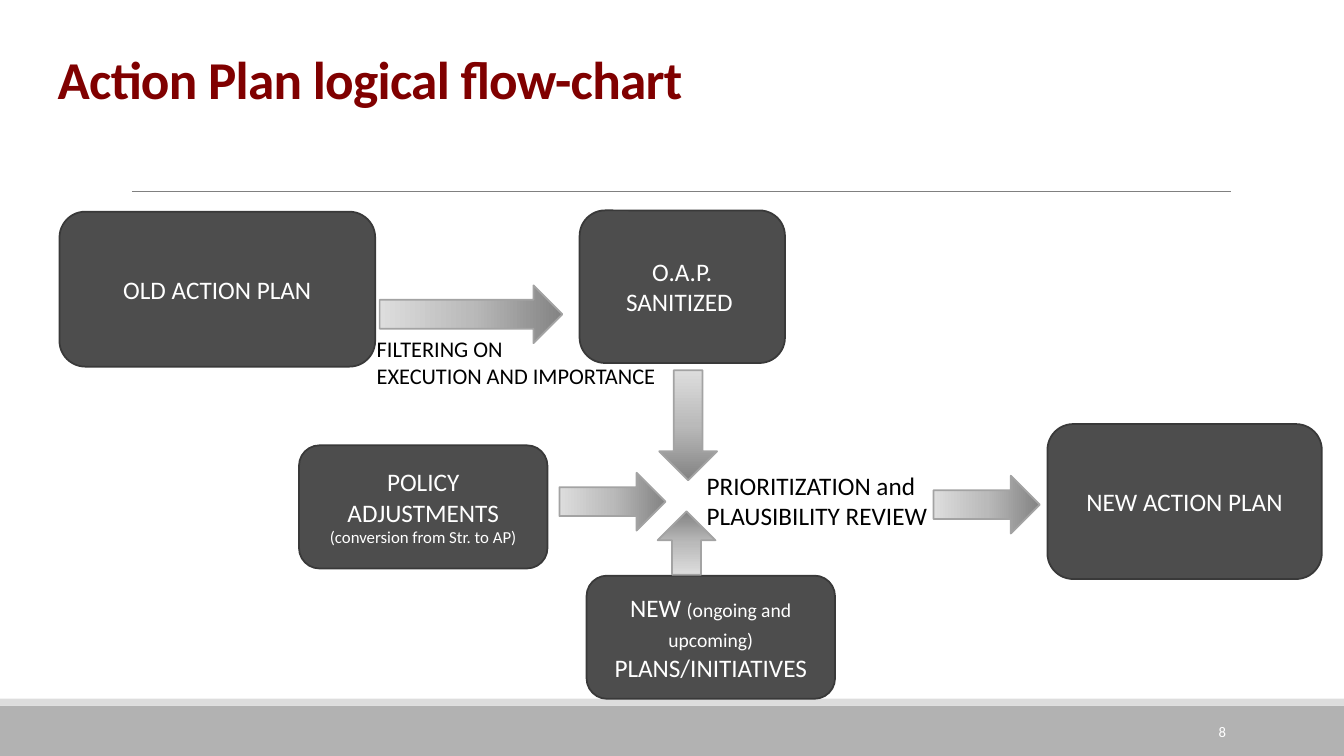
from copy import deepcopy
from dataclasses import dataclass

from lxml.etree import SubElement
from pptx import Presentation
from pptx.dml.color import RGBColor
from pptx.enum.shapes import MSO_CONNECTOR, MSO_SHAPE
from pptx.enum.text import MSO_ANCHOR, MSO_AUTO_SIZE, PP_ALIGN
from pptx.oxml.ns import qn
from pptx.util import Pt

FONT = "Calibri"
HEX = {
    "title": "800000", "rule": "808080", "band": "B2B2B2", "strip": "DDDDDD",
    "box": "4D4D4D", "edge": "393939", "rim": "A3A3A3",
    "white": "FFFFFF", "black": "000000",
}
FADE = [(0, "838383"), (0.5, "BABABA"), (1, "DDDDDD")]


@dataclass
class Box:
    left: float
    top: float
    width: float
    height: float
    runs: list[tuple[str, float]]


@dataclass
class Arrow:
    left: float
    top: float
    width: float
    turn: int = 0


@dataclass
class Label:
    left: float
    top: float
    width: float
    height: float
    text: str
    size: float


BOXES = [
    Box(42.5, 151.2, 225.5, 110.7, [("OLD ACTION PLAN", 18)]),
    Box(414, 150.3, 146.7, 109, [("O.A.P. SANITIZED ", 18)]),
    Box(748.2, 302.9, 196, 110.7, [("NEW ACTION PLAN", 18)]),
    Box(419, 411.2, 177.5, 88,
        [("NEW ", 18), ("(ongoing and upcoming)", 14), (" PLANS/INITIATIVES", 18)]),
    Box(213.6, 318.1, 177.5, 88,
        [("POLICY ADJUSTMENTS ", 18), ("(conversion from Str. to AP)", 12)]),
]
ARROWS = [
    Arrow(271.2, 203.8, 130.5),
    Arrow(452.3, 283.1, 78.5, 90),
    Arrow(399.6, 337.7, 75.8),
    Arrow(467.8, 367.2, 45.2, 270),
    Arrow(666.9, 339.8, 75.8),
]
LABELS = [
    Label(262, 235.6, 216, 46, "FILTERING ON\nEXECUTION AND IMPORTANCE", 16),
    Label(497.7, 332.1, 173.5, 51, "PRIORITIZATION and\vPLAUSIBILITY REVIEW", 18),
]


def tint(name: str) -> RGBColor:
    return RGBColor.from_string(HEX[name])


def style(font, size: float, name: str) -> None:
    font.name, font.size = FONT, Pt(size)
    font.color.rgb = tint(name)


def shape(kind, left: float, top: float, width: float, height: float):
    item = slide.shapes.add_shape(kind, Pt(left), Pt(top), Pt(width), Pt(height))
    item.shadow.inherit = False
    return item


def band(top: float, height: float, name: str) -> None:
    bar = shape(MSO_SHAPE.RECTANGLE, 0, top, 960, height)
    bar.fill.solid()
    bar.fill.fore_color.rgb = tint(name)
    bar.line.fill.background()


def edge(item, name: str) -> None:
    item.line.color.rgb = tint(name)
    item.line.width = Pt(1.25)


def draw_box(box: Box) -> None:
    item = shape(MSO_SHAPE.ROUNDED_RECTANGLE, box.left, box.top, box.width, box.height)
    item.fill.solid()
    item.fill.fore_color.rgb = tint("box")
    edge(item, "edge")
    item.text_frame.vertical_anchor = MSO_ANCHOR.MIDDLE
    para = item.text_frame.paragraphs[0]
    para.alignment = PP_ALIGN.CENTER
    style(para.font, box.runs[0][1], "white")
    for text, size in box.runs:
        run = para.add_run()
        run.text = text
        style(run.font, size, "white")


def draw_arrow(arrow: Arrow) -> None:
    item = shape(MSO_SHAPE.RIGHT_ARROW, arrow.left, arrow.top, arrow.width, 41.3)
    item.rotation = arrow.turn
    item.fill.gradient()
    item.fill.gradient_angle = 180
    # Add the middle stop of the fade
    first = next(item._element.spPr.iter(qn("a:gs")))
    first.addnext(deepcopy(first))
    for stop, (spot, code) in zip(item.fill.gradient_stops, FADE):
        stop.position = spot
        stop.color.rgb = RGBColor.from_string(code)
    edge(item, "rim")


def draw_label(label: Label, name: str = "black", align=PP_ALIGN.LEFT,
               anchor=MSO_ANCHOR.TOP, wrap: bool = False) -> None:
    item = slide.shapes.add_textbox(
        Pt(label.left), Pt(label.top), Pt(label.width), Pt(label.height))
    frame = item.text_frame
    frame.text = label.text
    frame.word_wrap = wrap
    frame.vertical_anchor = anchor
    for para in frame.paragraphs:
        para.alignment = align
        style(para.font, label.size, name)


deck = Presentation()
deck.slide_width, deck.slide_height = Pt(960), Pt(540)
slide = deck.slides.add_slide(deck.slide_layouts[5])

# Footer bands and rule
band(504, 36, "band")
band(499, 5, "strip")
rule = slide.shapes.add_connector(
    MSO_CONNECTOR.STRAIGHT, Pt(94.3), Pt(136.8), Pt(879), Pt(136.8))
rule.line.color.rgb = tint("rule")
rule.line.width = Pt(0.5)
SubElement(rule._element.spPr, qn("a:effectLst"))

# Title
title = slide.shapes.title
title.left, title.top, title.width, title.height = Pt(34), Pt(12.2), Pt(906.5), Pt(70.6)
frame = title.text_frame
frame.text = "Action Plan logical flow-chart"
frame.auto_size = MSO_AUTO_SIZE.NONE
frame.vertical_anchor = MSO_ANCHOR.BOTTOM
head = frame.paragraphs[0]
head.alignment = PP_ALIGN.LEFT
head.line_spacing = 0.85
style(head.font, 38, "title")
head.font.bold = True
head.runs[0].font._element.set("spc", "-50")

# Flow chart
for box in BOXES:
    draw_box(box)
for arrow in ARROWS:
    draw_arrow(arrow)
for label in LABELS:
    draw_label(label)

# Page number
draw_label(Label(779.8, 508.5, 103, 28.8, "8", 10.5), "white",
           PP_ALIGN.RIGHT, MSO_ANCHOR.MIDDLE, True)

deck.save("out.pptx")
